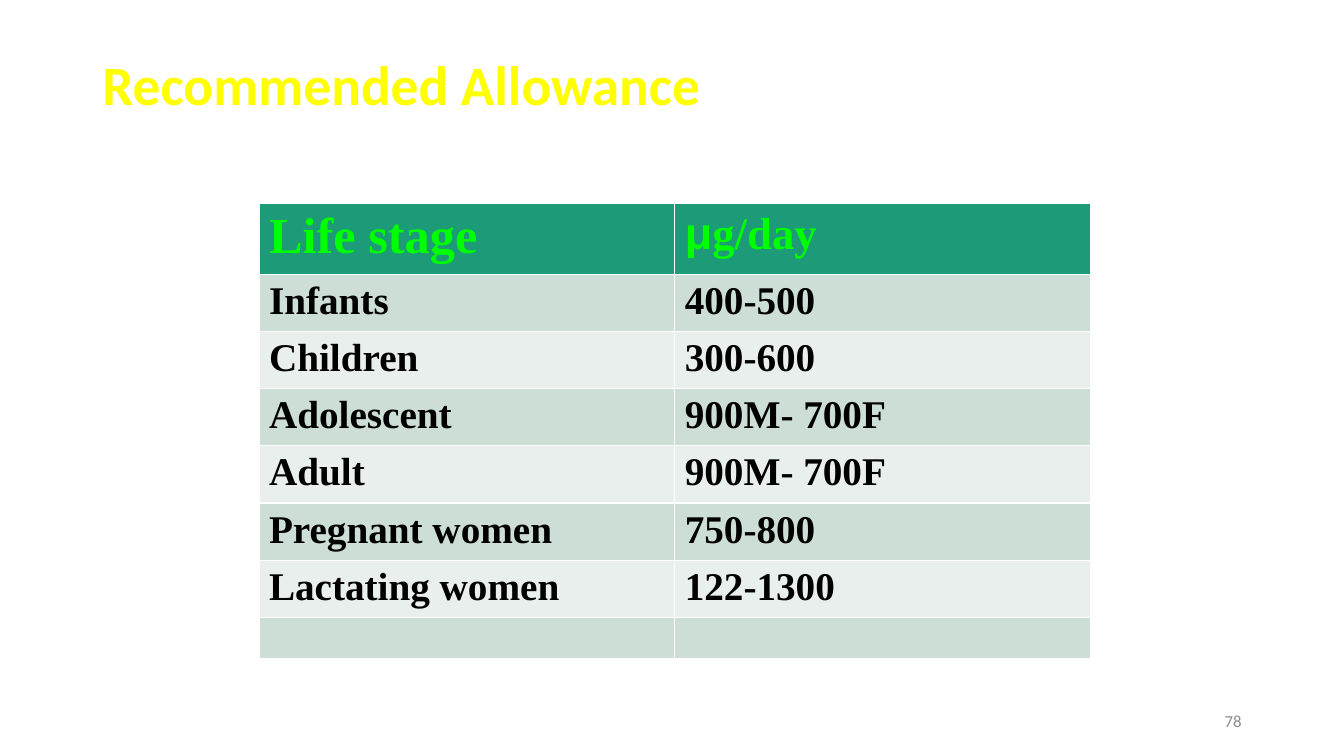
"""Build the Recommended Allowance slide."""
import pptx
import pptx.dml.color
import pptx.enum.text
import pptx.oxml
import pptx.oxml.ns
import pptx.util

Pt = pptx.util.Pt
ALIGN = pptx.enum.text.PP_ALIGN
ANCHOR = pptx.enum.text.MSO_ANCHOR

COLORS = {
    "title": "FFFF00", "head_text": "00FF00", "head_fill": "1D9A78",
    "text": "000000", "odd": "CDDED6", "even": "E8EFEC",
    "border": "FFFFFF", "number": "8C8C8C",
}
SERIF = "Times New Roman"
TITLE = "Recommended Allowance"
PAGE_NUMBER = "78"
HEADER = [
    [("Life stage", 36, SERIF)],
    [("μ", 32, "Arial"), ("g/day", 32, SERIF)],
]
ALLOWANCES = [
    ("Infants", "400-500"),
    ("Children", "300-600"),
    ("Adolescent", "900M- 700F"),
    ("Adult", "900M- 700F"),
    ("Pregnant women", "750-800"),
    ("Lactating women", "122-1300"),
    ("", ""),
]
TABLE_LEFT, TABLE_TOP, COL_W, ROW_H = 185, 145.5, 297, 29.5


def rgb(name):
    return pptx.dml.color.RGBColor.from_string(COLORS[name])


def add_run(p, text, size, font, color, bold):
    r = p.add_run()
    r.text = text
    r.font.size = Pt(size)
    r.font.name = font
    r.font.bold = bold
    r.font.color.rgb = rgb(color)


def add_text(s, box, text, size, color, bold, align, anchor, top_inset):
    tf = s.shapes.add_textbox(*map(Pt, box)).text_frame
    tf.word_wrap = True
    tf.vertical_anchor = anchor
    tf.margin_top = Pt(top_inset)
    p = tf.paragraphs[0]
    p.alignment = align
    add_run(p, text, size, "Calibri", color, bold)


def style_cell(cell, fill):
    tc_pr = cell._tc.get_or_add_tcPr()
    for side in ("lnL", "lnR", "lnT", "lnB"):
        tc_pr.append(pptx.oxml.parse_xml(
            f'<a:{side} {pptx.oxml.ns.nsdecls("a")} w="{Pt(1)}"><a:solidFill>'
            f'<a:srgbClr val="{COLORS["border"]}"/></a:solidFill></a:{side}>'))
    cell.fill.solid()
    cell.fill.fore_color.rgb = rgb(fill)


def add_allowance_table(s):
    body = [[[(text, 28, SERIF)] if text else [] for text in row]
            for row in ALLOWANCES]
    rows = [HEADER] + body
    table = s.shapes.add_table(
        len(rows), len(HEADER), Pt(TABLE_LEFT), Pt(TABLE_TOP),
        Pt(COL_W * len(HEADER)), Pt(ROW_H * len(rows))).table
    for i, row in enumerate(rows):
        fill = "head_fill" if i == 0 else "odd" if i % 2 else "even"
        color = "text" if i else "head_text"
        for j, runs in enumerate(row):
            cell = table.cell(i, j)
            style_cell(cell, fill)
            for text, size, font in runs:
                add_run(cell.text_frame.paragraphs[0], text, size, font, color, True)


def main():
    prs = pptx.Presentation()
    prs.slide_width, prs.slide_height = Pt(960), Pt(540)
    s = prs.slides.add_slide(prs.slide_layouts[6])
    add_text(s, (66, 28.8, 828, 104.4), TITLE, 39.6, "title", True,
             ALIGN.LEFT, ANCHOR.TOP, 7)
    add_allowance_table(s)
    add_text(s, (678, 500.5, 216, 28.8), PAGE_NUMBER, 12, "number", False,
             ALIGN.RIGHT, ANCHOR.MIDDLE, 3.6)
    prs.save("out.pptx")


if __name__ == "__main__":
    main()
